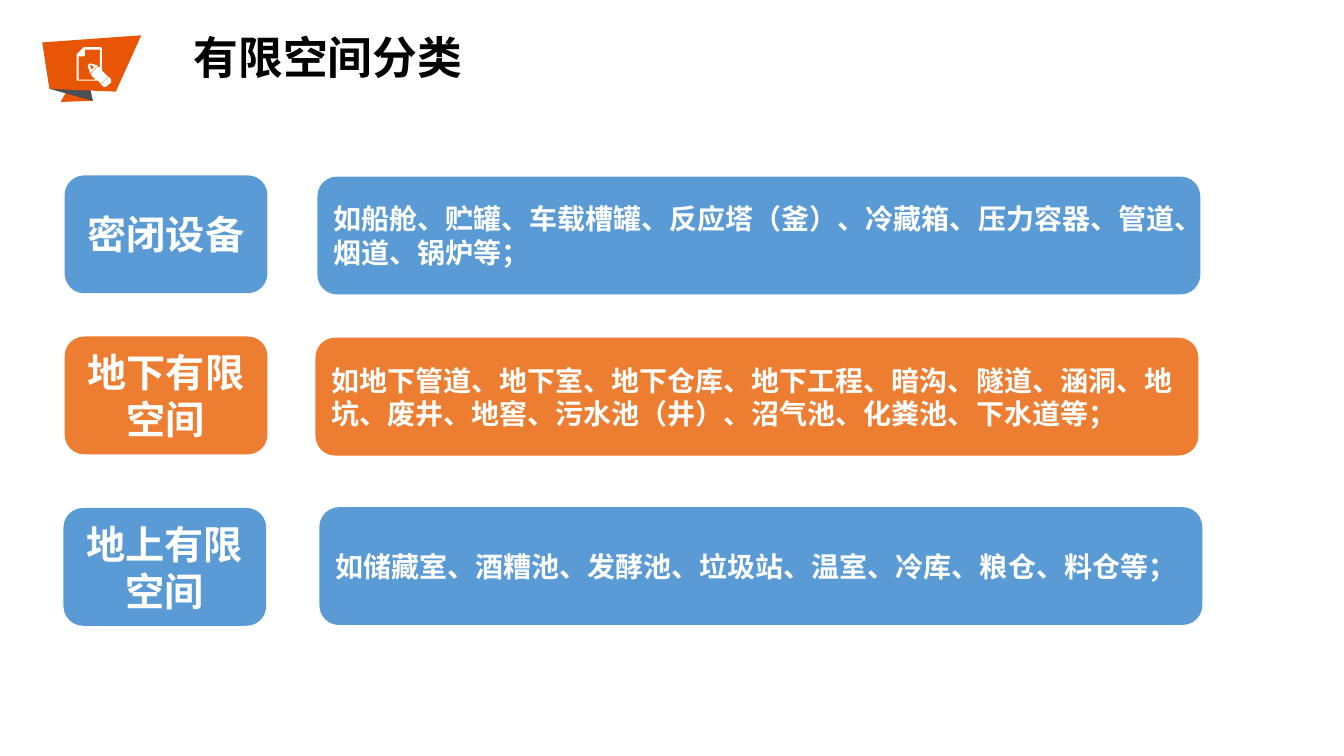
from pptx import Presentation
from pptx.dml.color import RGBColor
from pptx.enum.shapes import MSO_SHAPE
from pptx.enum.text import MSO_ANCHOR, MSO_AUTO_SIZE, PP_ALIGN
from pptx.oxml.ns import qn
from pptx.util import Cm, Pt

BLUE = RGBColor(0x5B, 0x9B, 0xD5)
ORANGE = RGBColor(0xED, 0x7D, 0x31)
BADGE_ORANGE = RGBColor(0xE8, 0x55, 0x04)
SLATE = RGBColor(0x49, 0x4F, 0x54)
WHITE = RGBColor(0xFF, 0xFF, 0xFF)
BLACK = RGBColor(0x00, 0x00, 0x00)
FONT = "Noto Sans CJK SC"

CARD_HEIGHT = 2.97
LABEL_WIDTH = 5.11
DETAIL_WIDTH = 22.25

# Each category: colour, label and its (left, top), detail and its (left, top) in cm
CATEGORIES = [
    (BLUE, "密闭设备", (1.63, 4.42),
     "如船舱、贮罐、车载槽罐、反应塔（釜）、冷藏箱、压力容器、管道、烟道、锅炉等；", (8.0, 4.45)),
    (ORANGE, "地下有限空间", (1.63, 8.48),
     "如地下管道、地下室、地下仓库、地下工程、暗沟、隧道、涵洞、地坑、废井、地窖、"
     "污水池（井）、沼气池、化粪池、下水道等；", (7.95, 8.51)),
    (BLUE, "地上有限空间", (1.6, 12.8),
     "如储藏室、酒糟池、发酵池、垃圾站、温室、冷库、粮仓、料仓等；", (8.05, 12.78)),
]

# Badge outlines in hundredths of a centimetre from the badge corner
FOOT = [[(127, 165), (104, 64), (46, 168)]]
FOLD = [[(104, 64), (0, 18), (18, 135), (127, 165)]]
FRONT = [[(249, 0), (0, 18), (18, 135), (185, 142)]]
PAGE_AND_PENCIL = [
    # Pencil end
    [(173, 119), (160, 130), (155, 130), (147, 124), (168, 104), (173, 112)],
    # Inside of the page
    [(145, 36), (107, 36), (107, 51), (104, 53), (91, 53), (91, 112),
     (135, 112), (124, 102), (122, 97), (137, 81), (140, 79), (145, 81)],
    # Page outline with pencil body
    [(150, 119), (147, 122), (140, 114), (86, 114), (86, 48), (104, 30),
     (147, 30), (150, 33), (150, 89), (165, 104), (163, 107)],
    # Inside of the pencil tip
    [(124, 76), (119, 76), (122, 81), (122, 86), (127, 84), (130, 79)],
    # Pencil tip
    [(130, 86), (119, 97), (119, 89), (114, 79), (117, 72), (122, 71),
     (132, 74), (140, 76)],
]


def paint(shape, color):
    shape.shadow.inherit = False
    shape.fill.solid()
    shape.fill.fore_color.rgb = color
    shape.line.fill.background()


def write(para, text, size, color, align):
    para.alignment = align
    para._p.get_or_add_pPr().set("hangingPunct", "1")
    span = para.add_run()
    span.text = text
    span.font.size = Pt(size)
    span.font.bold = True
    span.font.name = FONT
    span.font.color.rgb = color
    properties = span._r.get_or_add_rPr()
    properties.set("lang", "zh-CN")
    east_asian = properties.makeelement(qn("a:ea"), {"typeface": FONT})
    properties.find(qn("a:latin")).addnext(east_asian)


def add_title(page, text, left, top, width, height):
    title = page.shapes.title
    title.left, title.top = Cm(left), Cm(top)
    title.width, title.height = Cm(width), Cm(height)
    frame = title.text_frame
    frame.word_wrap = False
    frame.auto_size = MSO_AUTO_SIZE.SHAPE_TO_FIT_TEXT
    frame.vertical_anchor = MSO_ANCHOR.TOP
    para = frame.paragraphs[0]
    para.line_spacing = Pt(24)
    para.space_before = Pt(0)
    write(para, text, 32, BLACK, PP_ALIGN.CENTER)


def add_badge(page, left, top):
    layers = [(FOOT, BADGE_ORANGE), (FOLD, SLATE),
              (FRONT, BADGE_ORANGE), (PAGE_AND_PENCIL, WHITE)]
    for contours, color in layers:
        builder = page.shapes.build_freeform(*contours[0][0], scale=Cm(0.01))
        for index, contour in enumerate(contours):
            if index:
                builder.move_to(*contour[0])
            builder.add_line_segments(contour[1:], close=True)
        paint(builder.convert_to_shape(Cm(left), Cm(top)), color)


def add_card(page, corner, width, color, text, size, align):
    left, top = corner
    card = page.shapes.add_shape(MSO_SHAPE.ROUNDED_RECTANGLE, Cm(left), Cm(top),
                                 Cm(width), Cm(CARD_HEIGHT))
    paint(card, color)
    frame = card.text_frame
    frame.word_wrap = True
    frame.vertical_anchor = MSO_ANCHOR.MIDDLE
    write(frame.paragraphs[0], text, size, WHITE, align)


def main():
    deck = Presentation()
    deck.slide_width, deck.slide_height = Cm(33.87), Cm(19.05)
    page = deck.slides.add_slide(deck.slide_layouts[5])

    # Heading
    add_title(page, "有限空间分类", 4.62, 1.14, 7.29, 1.12)
    add_badge(page, 1.07, 0.89)

    # Category rows
    for color, label, label_corner, detail, detail_corner in CATEGORIES:
        add_card(page, label_corner, LABEL_WIDTH, color, label, 28, PP_ALIGN.CENTER)
        add_card(page, detail_corner, DETAIL_WIDTH, color, detail, 20, PP_ALIGN.LEFT)

    deck.save("out.pptx")


if __name__ == "__main__":
    main()
